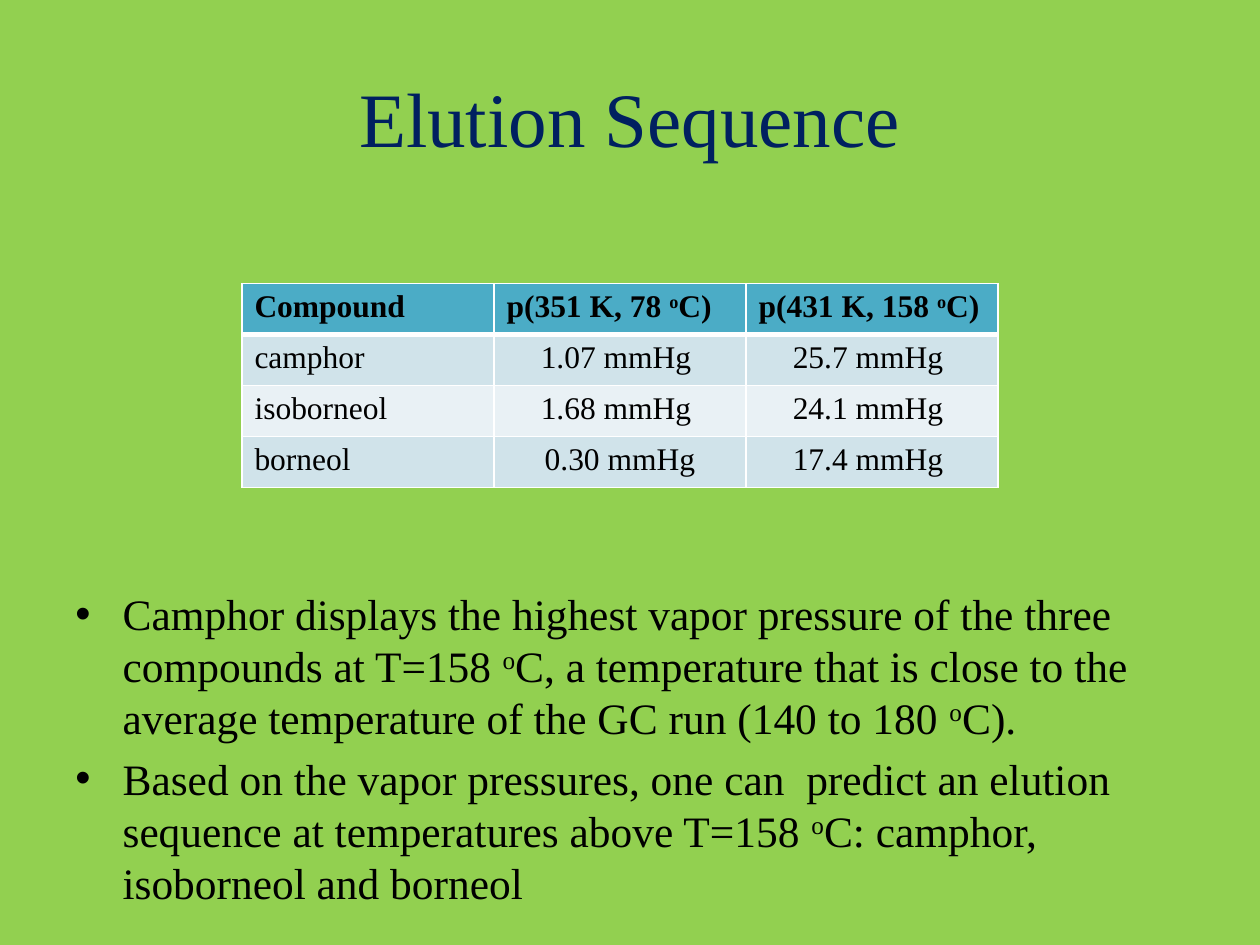
from dataclasses import dataclass

from lxml import etree
from pptx import Presentation
from pptx.dml.color import RGBColor
from pptx.enum.text import MSO_ANCHOR, PP_ALIGN
from pptx.oxml.ns import qn
from pptx.util import Inches, Pt

CENTER, LEFT = PP_ALIGN.CENTER, PP_ALIGN.LEFT
MIDDLE, TOP = MSO_ANCHOR.MIDDLE, MSO_ANCHOR.TOP
WIDTH, HEIGHT = Inches(10), Inches(7.5)


@dataclass(frozen=True)
class Theme:
    """Colours, font and type sizes of the slide."""
    font: str = "Times New Roman"
    page: str = "92D050"
    title: str = "002060"
    ink: str = "000000"
    rule: str = "FFFFFF"
    header: str = "4BACC6"
    bands: tuple = ("D0E3EA", "E9F1F5")
    title_size: float = 44
    body_size: float = 24.8
    body_leading: float = 29.7
    table_size: float = 18


THEME = Theme()
TITLE = "Elution Sequence"
ROWS = (
    ("Compound", "p(351 K, 78 ^o^C)", "p(431 K, 158 ^o^C)"),
    ("camphor", "1.07 mmHg ", "25.7 mmHg "),
    ("isoborneol", "1.68 mmHg ", "24.1 mmHg "),
    ("borneol", "0.30 mmHg", "17.4 mmHg "),
)
POINTS = (
    "Camphor displays the highest vapor pressure of the three compounds at T=158 ^o^C, "
    "a temperature that is close to the average temperature of the GC run (140 to 180 ^o^C).",
    "Based on the vapor pressures, one can  predict an elution sequence at temperatures "
    "above T=158 ^o^C: camphor, isoborneol and borneol",
)


def share(left, top, width, height):
    """Turn shares of the slide into a box of lengths."""
    return tuple(round(part * side) for part, side in
                 zip((left, top, width, height), (WIDTH, HEIGHT) * 2))


def set_values(target, values):
    """Set each named attribute on the target."""
    for name, value in values.items():
        setattr(target, name, value)


def write(para, text, size, color=THEME.ink, bold=False):
    """Write text into a paragraph, raising the parts between carets."""
    for index, part in enumerate(text.split("^")):
        span = para.add_run()
        span.text = part
        set_values(span.font, {"name": THEME.font, "size": Pt(size), "bold": bold})
        span.font.color.rgb = RGBColor.from_string(color)
        if index % 2:
            span.font._element.set("baseline", "30000")


def add_frame(page, box, anchor):
    """Add a wrapping text box and return its text frame."""
    frame = page.shapes.add_textbox(*box).text_frame
    set_values(frame, {"word_wrap": True, "vertical_anchor": anchor})
    return frame


def add_title(page, box):
    """Place the centred slide title."""
    para = add_frame(page, box, MIDDLE).paragraphs[0]
    para.alignment = CENTER
    write(para, TITLE, THEME.title_size, THEME.title)


def add_bullets(page, box):
    """Place the bulleted conclusions with hanging indents."""
    frame = add_frame(page, box, TOP)
    indent = Inches(0.375)
    for index, text in enumerate(POINTS):
        para = frame.add_paragraph() if index else frame.paragraphs[0]
        set_values(para, {"line_spacing": Pt(THEME.body_leading),
                          "space_after": Pt(THEME.body_size * 0.2)})
        properties = para._p.get_or_add_pPr()
        properties.set("marL", str(indent))
        properties.set("indent", str(-indent))
        etree.SubElement(properties, qn("a:buFont")).set("typeface", "Arial")
        etree.SubElement(properties, qn("a:buChar")).set("char", "•")
        write(para, text, THEME.body_size)


def add_borders(cell, widths):
    """Draw solid cell borders with the given widths in points."""
    properties = cell._tc.get_or_add_tcPr()
    for index, (side, width) in enumerate(widths.items()):
        line = etree.Element(qn(f"a:{side}"), w=str(Pt(width)))
        fill = etree.SubElement(line, qn("a:solidFill"))
        etree.SubElement(fill, qn("a:srgbClr")).set("val", THEME.rule)
        properties.insert(index, line)


def add_pressure_table(page, box):
    """Place the vapor pressure table with equal columns and rows."""
    table = page.shapes.add_table(len(ROWS), len(ROWS[0]), *box).table
    for row, texts in enumerate(ROWS):
        header = row == 0
        color = THEME.header if header else THEME.bands[(row - 1) % 2]
        widths = {"lnL": 1, "lnR": 1, "lnT": 3 if row == 1 else 1, "lnB": 3 if header else 1}
        for column, text in enumerate(texts):
            cell = table.cell(row, column)
            cell.fill.solid()
            cell.fill.fore_color.rgb = RGBColor.from_string(color)
            add_borders(cell, widths)
            para = cell.text_frame.paragraphs[0]
            para.alignment = LEFT if header or column == 0 else CENTER
            write(para, text, THEME.table_size, bold=header)


def main():
    """Build the slide and save the deck."""
    deck = Presentation()
    set_values(deck, {"slide_width": WIDTH, "slide_height": HEIGHT})
    page = deck.slides.add_slide(deck.slide_layouts[6])
    page.background.fill.solid()
    page.background.fill.fore_color.rgb = RGBColor.from_string(THEME.page)
    add_title(page, share(0.05, 0.04, 0.9, 1 / 6))
    add_bullets(page, share(0.05, 0.615, 0.9, 0.36))
    add_pressure_table(page, share(0.192, 0.3, 0.6, 0.216))
    deck.save("out.pptx")


if __name__ == "__main__":
    main()
